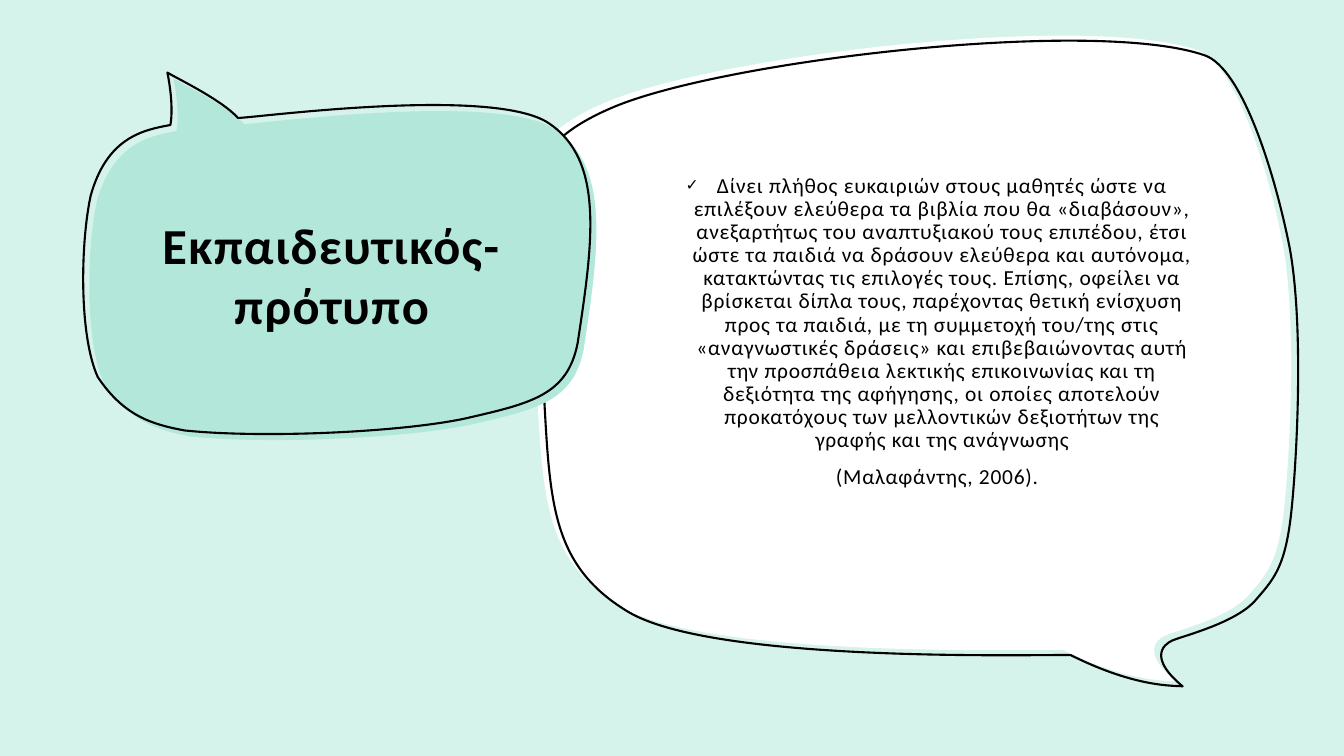
from math import cos, radians, sin

from lxml.etree import SubElement
from pptx import Presentation
from pptx.dml.color import RGBColor
from pptx.enum.text import MSO_ANCHOR, PP_ALIGN
from pptx.oxml.ns import qn
from pptx.util import Inches, Pt

TITLE = "Εκπαιδευτικός-πρότυπο"
ADVICE = (
    "Δίνει πλήθος ευκαιριών στους μαθητές ώστε να επιλέξουν ελεύθερα τα βιβλία "
    "που θα «διαβάσουν», ανεξαρτήτως του αναπτυξιακού τους επιπέδου, έτσι ώστε τα "
    "παιδιά να δράσουν ελεύθερα και αυτόνομα, κατακτώντας τις επιλογές τους. "
    "Επίσης, οφείλει να βρίσκεται δίπλα τους, παρέχοντας θετική ενίσχυση προς τα "
    "παιδιά, με τη συμμετοχή του/της στις «αναγνωστικές δράσεις» και "
    "επιβεβαιώνοντας αυτή την προσπάθεια λεκτικής επικοινωνίας και τη δεξιότητα "
    "της αφήγησης, οι οποίες αποτελούν προκατόχους των μελλοντικών δεξιοτήτων της "
    "γραφής και της ανάγνωσης"
)
CITATION = "(Μαλαφάντης, 2006)."

COLORS = {"background": "D5F2EB", "advice": "FFFFFF", "title": "B2E7DA", "ink": "000000"}
FONT = "Calibri"

# Each outline: start point, then cubic curves (two control points and an end point),
# in inches on the slide, as seen after the bubble is tilted.
ADVICE_BUBBLE = {
    "box": (5.25, 0.41, 7.56, 6.46),
    "tilt": 357.5,
    "outline": [
        [(11.57, 6.3)],
        [(11.7, 6.25), (12.17, 6.13), (12.37, 5.92)],
        [(12.56, 5.7), (12.68, 5.59), (12.74, 5.01)],
        [(12.8, 4.42), (12.86, 3.15), (12.72, 2.4)],
        [(12.57, 1.65), (12.25, 0.63), (11.88, 0.5)],
        [(10.79, 0.12), (7.09, 0.55), (6, 1.02)],
        [(4.9, 1.49), (5.2, 2.06), (5.29, 3.31)],
        [(5.4, 4.74), (5.28, 5.49), (6.16, 6.02)],
        [(7.03, 6.54), (10.32, 6.44), (10.55, 6.45)],
        [(11.21, 6.78), (11.59, 6.75), (11.66, 6.76)],
        [(11.24, 6.41), (11.57, 6.3), (11.57, 6.3)],
    ],
}
TITLE_BUBBLE = {
    "box": (0.85, 0.64, 5.09, 3.72),
    "tilt": 354.9,
    "outline": [
        [(1.72, 0.78)],
        [(1.8, 0.83), (2.26, 1.05), (2.42, 1.23)],
        [(2.58, 1.23), (4.94, 0.91), (5.5, 1.28)],
        [(6.06, 1.65), (5.94, 2.47), (5.79, 3.46)],
        [(5.69, 3.98), (5.33, 4.06), (4.68, 4.21)],
        [(4.03, 4.35), (2.65, 4.41), (1.89, 4.33)],
        [(1.57, 4.27), (1.29, 4.19), (1.03, 3.8)],
        [(0.84, 3.38), (0.86, 2.46), (0.96, 2)],
        [(1.12, 1.43), (1.47, 1.35), (1.75, 1.3)],
        [(1.75, 1.3), (1.79, 1.13), (1.72, 0.78)],
    ],
}


def color(name):
    return RGBColor.from_string(COLORS[name])


def untilt(point, box, tilt):
    """Turn a slide point back around the box centre and measure it from the box corner."""
    left, top, width, height = box
    dx, dy = point[0] - left - width / 2, point[1] - top - height / 2
    c, s = cos(radians(tilt)), sin(radians(tilt))
    return width / 2 + dx * c + dy * s, height / 2 - dx * s + dy * c


def add_bubble(slide, bubble, fill=None, shift=(0, 0)):
    """Draw a filled bubble, or its ink outline when no fill is given."""
    left, top, width, height = bubble["box"]
    left, top = left + shift[0], top + shift[1]
    right, bottom = left + width, top + height
    builder = slide.shapes.build_freeform(Inches(left), Inches(top))
    builder.add_line_segments([(Inches(x), Inches(y)) for x, y in
                               ((right, top), (right, bottom), (left, bottom))])
    shape = builder.convert_to_shape()

    # Put the curves in place of the straight frame.
    curves = next(shape._element.iter(qn("a:path")))
    for segment in list(curves):
        curves.remove(segment)
    for points in bubble["outline"]:
        tag = "a:moveTo" if len(points) == 1 else "a:cubicBezTo"
        segment = SubElement(curves, qn(tag))
        for point in points:
            x, y = untilt(point, bubble["box"], bubble["tilt"])
            SubElement(segment, qn("a:pt"), x=str(Inches(x)), y=str(Inches(y)))
    SubElement(curves, qn("a:close"))

    shape.rotation = bubble["tilt"]
    shape.shadow.inherit = False
    if fill:
        shape.fill.solid()
        shape.fill.fore_color.rgb = color(fill)
        shape.line.fill.background()
    else:
        shape.fill.background()
        shape.line.color.rgb = color("ink")
        shape.line.width = Pt(1.5)


def add_text(slide, box, paragraphs, size, bold=False, tracking=0, line_spacing=1.0,
             gap=0, indents=(0,), bullet=None, bottom=0.05):
    """Add centred text; the bullet, if any, marks the first paragraph only."""
    frame = slide.shapes.add_textbox(*map(Inches, box)).text_frame
    frame.word_wrap = True
    frame.vertical_anchor = MSO_ANCHOR.MIDDLE
    frame.margin_bottom = Inches(bottom)
    for index, (text, indent) in enumerate(zip(paragraphs, indents)):
        paragraph = frame.paragraphs[0] if index == 0 else frame.add_paragraph()
        paragraph.alignment = PP_ALIGN.CENTER
        paragraph.line_spacing = line_spacing
        if index:
            paragraph.space_before = Pt(gap)
        properties = paragraph._p.get_or_add_pPr()
        properties.set("marL", str(Inches(indent)))
        if bullet and index == 0:
            properties.set("indent", str(-Inches(indent)))
            SubElement(properties, qn("a:buSzPct"), val="73000")
            SubElement(properties, qn("a:buFont"), typeface=FONT)
            SubElement(properties, qn("a:buChar"), char=bullet)
        run = paragraph.add_run()
        run.text = text
        run.font.name = FONT
        run.font.size = Pt(size)
        run.font.bold = bold
        run.font.color.rgb = color("ink")
        run._r.get_or_add_rPr().set("spc", str(int(tracking * 100)))


def main():
    deck = Presentation()
    deck.slide_width, deck.slide_height = Inches(13.33), Inches(7.5)
    slide = deck.slides.add_slide(deck.slide_layouts[6])
    slide.background.fill.solid()
    slide.background.fill.fore_color.rgb = color("background")

    add_bubble(slide, ADVICE_BUBBLE, fill="advice")
    add_bubble(slide, ADVICE_BUBBLE, shift=(0.07, 0.05))
    add_bubble(slide, TITLE_BUBBLE, fill="title")
    add_text(slide, (1.15, 1.58, 4.28, 2.28), [TITLE], 36, bold=True, tracking=1)
    add_bubble(slide, TITLE_BUBBLE, shift=(-0.06, -0.06))
    add_text(slide, (6.4, 1.24, 5.58, 4.61), [ADVICE, CITATION], 15.3, tracking=0.5,
             line_spacing=0.9, gap=10, indents=(0.31, 0.21), bullet="✓", bottom=0.55)
    deck.save("out.pptx")


if __name__ == "__main__":
    main()
